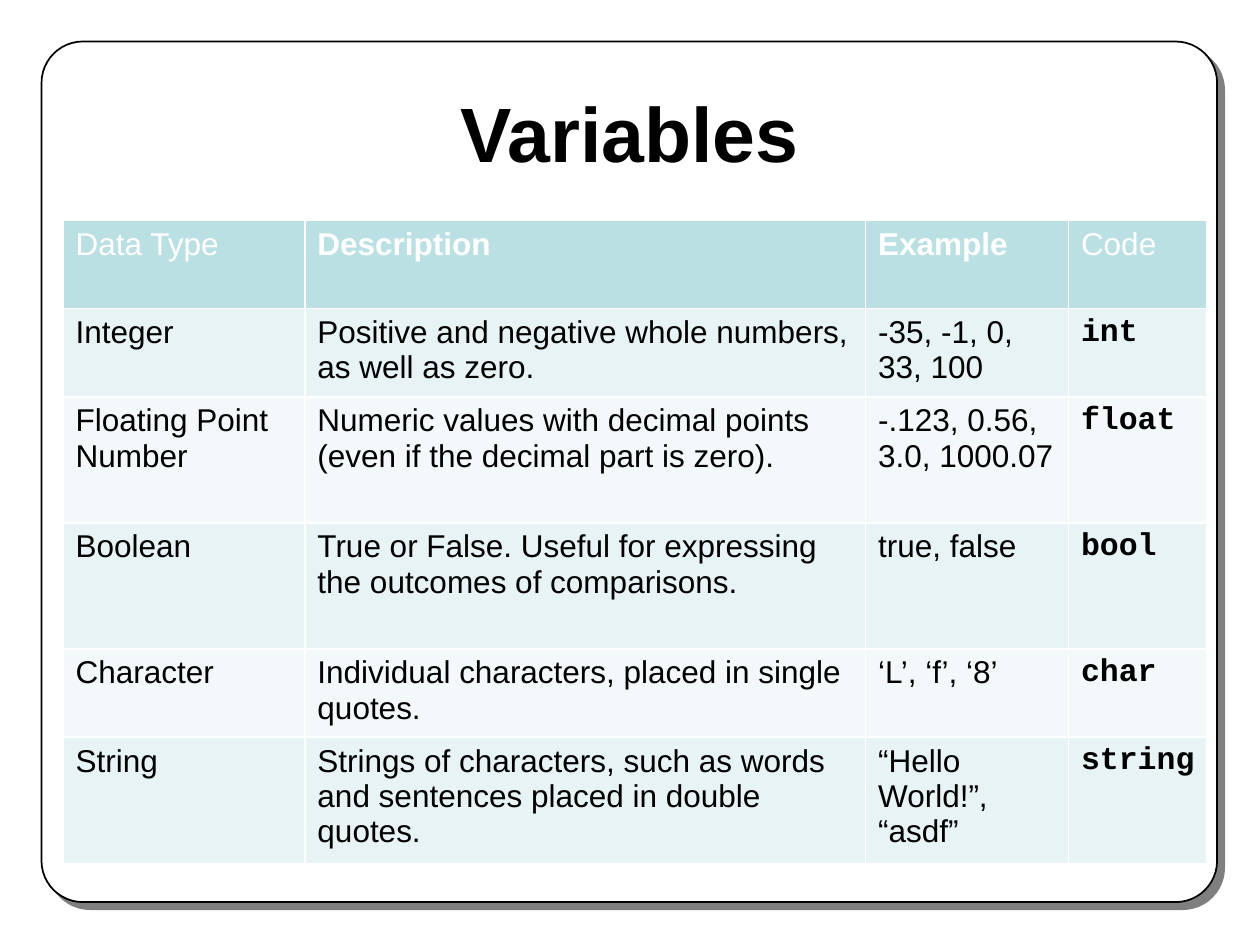
import dataclasses

import lxml.etree
import pptx
import pptx.dml.color
import pptx.enum.shapes
import pptx.enum.text
import pptx.oxml
import pptx.oxml.ns
import pptx.util

Inches = pptx.util.Inches
Pt = pptx.util.Pt
qn = pptx.oxml.ns.qn


@dataclasses.dataclass(frozen=True)
class Theme:
    ink: str = "000000"
    paper: str = "FFFFFF"
    head: str = "BBE0E3"
    bands: tuple = ("E7F3F4", "F3F9FA")
    font: str = "Arial"
    mono: str = "Courier New"
    title: int = 44
    body: int = 18


def color(code):
    return pptx.dml.color.RGBColor.from_string(code)


def write(frame, text, size, font, ink, bold=False, align=None):
    """Put one formatted paragraph into a text frame."""
    para = frame.paragraphs[0]
    para.alignment = align
    run = para.add_run()
    run.text = text
    run.font.size = Pt(size)
    run.font.name = font
    run.font.bold = bold
    run.font.color.rgb = color(ink)


class Deck:
    def __init__(self, theme, slide):
        self.theme = theme
        self.slide = slide

    def panel(self, left, top, width, height, round):
        """Draw the rounded frame with its offset shadow."""
        shape = self.slide.shapes.add_shape(
            pptx.enum.shapes.MSO_SHAPE.ROUNDED_RECTANGLE,
            Inches(left), Inches(top), Inches(width), Inches(height))
        shape.adjustments[0] = round
        shape.fill.solid()
        shape.fill.fore_color.rgb = color(self.theme.paper)
        shape.line.color.rgb = color(self.theme.ink)
        shape.line.width = Pt(1)
        shape.shadow.inherit = False
        effects = shape._element.spPr.find(qn("a:effectLst"))
        shadow = lxml.etree.SubElement(
            effects, qn("a:outerShdw"), dist=str(Pt(5.7)),
            dir=str(45 * 60000), algn="ctr", rotWithShape="0")
        tint = lxml.etree.SubElement(
            shadow, qn("a:srgbClr"), val=self.theme.ink)
        lxml.etree.SubElement(tint, qn("a:alpha"), val="50000")

    def title(self, text, left, top, width, height):
        box = self.slide.shapes.add_textbox(
            Inches(left), Inches(top), Inches(width), Inches(height))
        frame = box.text_frame
        frame.word_wrap = True
        frame.vertical_anchor = pptx.enum.text.MSO_ANCHOR.MIDDLE
        write(frame, text, self.theme.title, self.theme.font, self.theme.ink,
              bold=True, align=pptx.enum.text.PP_ALIGN.CENTER)

    def border(self, cell):
        """Rule all four sides of a cell; lines go before its fill."""
        props = cell._tc.get_or_add_tcPr()
        for spot, side in enumerate(("a:lnL", "a:lnR", "a:lnT", "a:lnB")):
            line = pptx.oxml.parse_xml(
                f'<{side} {pptx.oxml.ns.nsdecls("a")} w="{Pt(1)}"><a:solidFill>'
                f'<a:srgbClr val="{self.theme.paper}"/></a:solidFill></{side}>')
            props.insert(spot, line)

    def table(self, rows, left, top, widths, heights):
        theme = self.theme
        grid = self.slide.shapes.add_table(
            len(rows), len(widths), Inches(left), Inches(top),
            Inches(sum(widths)), Inches(sum(heights))).table
        for col, width in zip(grid.columns, widths):
            col.width = Inches(width)
        for r, row in enumerate(rows):
            grid.rows[r].height = Inches(heights[r])
            for c, text in enumerate(row):
                cell = grid.cell(r, c)
                code = r > 0 and c == len(row) - 1
                # The two middle headings and the code names are bold
                bold = code or (r == 0 and c in (1, 2))
                cell.fill.solid()
                cell.fill.fore_color.rgb = color(
                    theme.bands[(r - 1) % 2] if r else theme.head)
                self.border(cell)
                write(cell.text_frame, text, theme.body,
                      theme.mono if code else theme.font,
                      theme.ink if r else theme.paper, bold=bold)


ROWS = [
    ("Data Type", "Description", "Example", "Code"),
    ("Integer", "Positive and negative whole numbers, as well as zero.",
     "-35, -1, 0, 33, 100", "int"),
    ("Floating Point Number",
     "Numeric values with decimal points (even if the decimal part is zero).",
     "-.123, 0.56, 3.0, 1000.07", "float"),
    ("Boolean",
     "True or False. Useful for expressing the outcomes of comparisons.",
     "true, false", "bool"),
    ("Character", "Individual characters, placed in single quotes.",
     "‘L’, ‘f’, ‘8’", "char"),
    ("String",
     "Strings of characters, such as words and sentences placed in double "
     "quotes.", "“Hello World!”, “asdf”", "string"),
]


def main():
    show = pptx.Presentation()
    show.slide_width = Inches(10)
    show.slide_height = Inches(7.5)
    deck = Deck(Theme(), show.slides.add_slide(show.slide_layouts[6]))

    # Frame and heading
    deck.panel(0.33, 0.33, 9.33, 6.83, round=0.048)
    deck.title("Variables", 0.5, 0.42, 9, 1.25)

    # Data types
    deck.table(ROWS, 0.5, 1.75, widths=(1.92, 4.45, 1.61, 1.1),
               heights=(0.7, 0.7, 1, 1, 0.7, 1))

    show.save("out.pptx")


if __name__ == "__main__":
    main()
